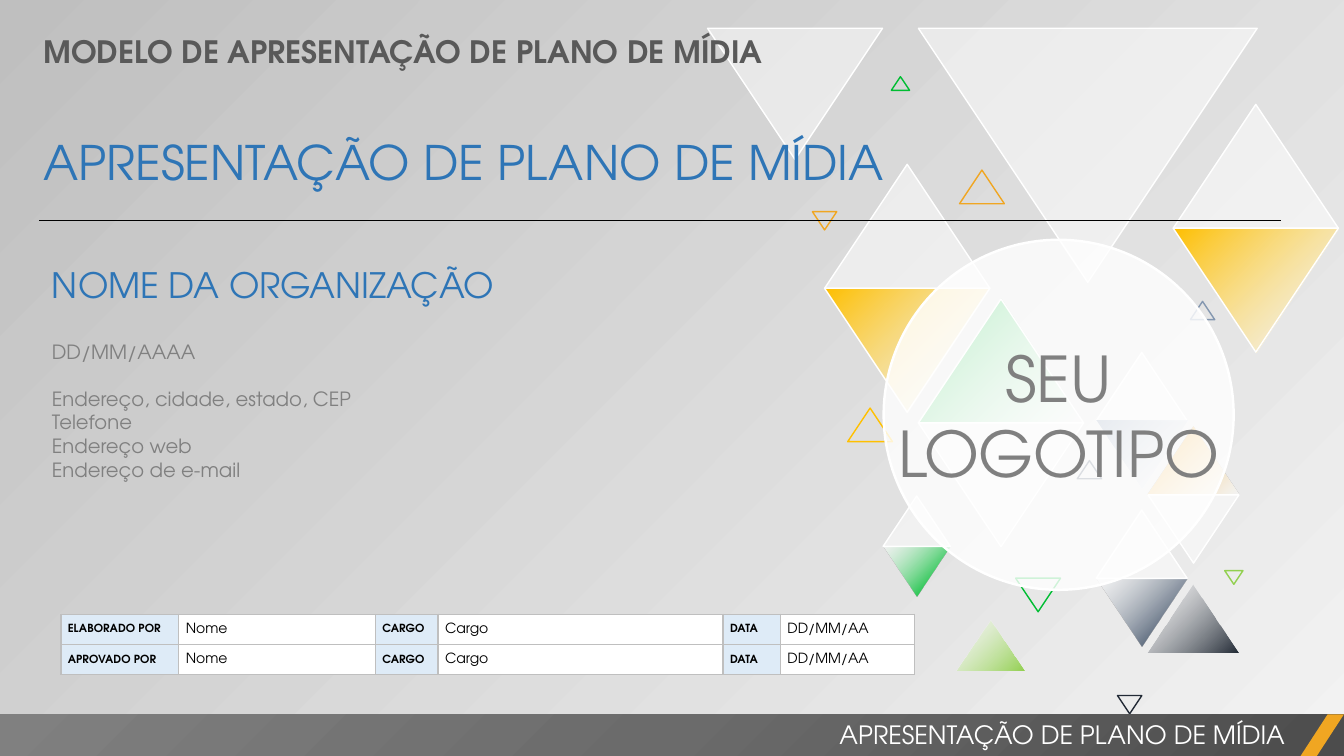
"""Build the cover slide of a media plan presentation."""
import pptx
import pptx.dml.color
import pptx.enum.shapes
import pptx.enum.text
import pptx.oxml
import pptx.oxml.ns
import pptx.util

Pt = pptx.util.Pt
RGB = pptx.dml.color.RGBColor.from_string
qn = pptx.oxml.ns.qn
KIND = pptx.enum.shapes.MSO_SHAPE
ALIGN = pptx.enum.text.PP_ALIGN
MIDDLE = pptx.enum.text.MSO_ANCHOR.MIDDLE
FONT = "TeX Gyre Adventor"
HUES = {
    "white": "FFFFFF", "black": "000000", "pale": "F2F2F2", "silver": "BFBFBF",
    "gold": "FFC000", "green": "00BD32", "lime": "92D050", "orange": "F0A622",
    "night": "222A35", "slate": "44546A", "steel": "8497B0", "blue": "2E75B6",
    "ice": "DEEBF7", "gray": "808080", "dark": "595959",
    "coal": "4C4C4C", "ash": "6B6B6B",
}


def paint(fill, node, stops, way='<a:lin ang="13500000" scaled="0"/>'):
    """Fill with (place, hue, opacity) stops; a single stop is a solid fill."""
    marks = [(at, f'<a:srgbClr val="{HUES[hue]}"><a:alpha val="{seen * 1000}"/></a:srgbClr>')
             for at, hue, seen in stops]
    if len(marks) == 1:
        fill.solid()
        tag, body = "solidFill", marks[0][1]
    else:
        fill.gradient()
        list_ = "".join(f'<a:gs pos="{at * 1000}">{hue}</a:gs>' for at, hue in marks)
        tag, body = "gradFill", f"<a:gsLst>{list_}</a:gsLst>{way}"
    turn = ' rotWithShape="1"' if tag == "gradFill" else ""
    old = node.find(".//" + qn("a:" + tag))
    new = pptx.oxml.parse_xml(
        f'<a:{tag} {pptx.oxml.ns.nsdecls("a")}{turn}>{body}</a:{tag}>')
    old.getparent().replace(old, new)


def write(frame, rows, **look):
    """Write (text, size, hue, space before) rows; look sets paragraph values."""
    for i, (text, size, hue, gap) in enumerate(rows):
        para = frame.paragraphs[0] if i == 0 else frame.add_paragraph()
        for key, val in {"space_before": Pt(gap), **look}.items():
            setattr(para, key, val)
        run = para.add_run()
        run.text = text
        for key, val in {"name": FONT, "size": Pt(size), "bold": False}.items():
            setattr(run.font, key, val)
        run.font.color.rgb = RGB(HUES[hue])


deck = pptx.Presentation()
deck.slide_width, deck.slide_height = Pt(960), Pt(540)
slide = deck.slides.add_slide(deck.slide_layouts[6])
shapes = slide.shapes
paint(slide.background.fill, slide._element, [(0, "pale", 40), (100, "silver", 100)])

glass = [(0, "white", 50)]
fade = {hue: [(0, hue, 100), (100, "white", 50)]
        for hue in ("gold", "night", "steel", "lime")}
glow = {hue: [(0, "white", 50), (82, hue, 100)]
        for hue in ("green", "slate", "orange")}
UP, DOWN = 0, 180
tiles = [
    (589, 117.4, 118, UP, glass, "white"),
    (589, 205.9, 118, DOWN, fade["gold"], "white"),
    (656, 213.6, 118, UP, glow["green"], "white"),
    (656, 302, 118, DOWN, glass, "white"),
    (656, 20.2, 242, DOWN, glass, "white"),
    (819.5, 417.6, 65, UP, fade["night"], None),
    (783, 413.3, 65, DOWN, glow["slate"], None),
    (783, 364.4, 65, UP, glass, "white"),
    (783, 251.8, 65, UP, glass, "white"),
    (783, 300.5, 65, DOWN, fade["steel"], None),
    (820, 304.7, 65, UP, glow["orange"], None),
    (820, 353.5, 65, DOWN, glass, "white"),
    (683.5, 443, 48, UP, fade["lime"], None),
    (630.8, 390.3, 48, DOWN, glow["green"], None),
    (630.8, 354.3, 48, UP, glass, "white"),
    (838, 74.6, 118, UP, glass, "white"),
    (838, 163, 118, DOWN, fade["gold"], "white"),
    (725.5, 413, 32, DOWN, None, "green"),
    (605.5, 291.5, 32, UP, None, "gold"),
    (769.5, 329, 17.4, UP, None, "slate"),
    (798.2, 496.8, 17.4, DOWN, None, "night"),
    (580.3, 151.2, 17.4, DOWN, None, "orange"),
    (850.3, 215.3, 17.4, UP, None, "steel"),
    (636.7, 54.8, 13, UP, None, "green"),
    (874.8, 407.6, 13, DOWN, None, "lime"),
    (685.4, 121.5, 32, UP, None, "orange"),
    (505.4, 20.2, 125, DOWN, glass, "white"),
]
for x, y, wide, turn, stops, edge in tiles:
    tile = shapes.add_shape(KIND.ISOSCELES_TRIANGLE, Pt(x), Pt(y), Pt(wide), Pt(wide * 0.75))
    tile.shadow.inherit = False
    tile.rotation = turn
    if stops:
        paint(tile.fill, tile._element, stops)
    else:
        tile.fill.background()
    if edge:
        tile.line.color.rgb = RGB(HUES[edge])
        tile.line.width = Pt(1)
    else:
        tile.line.fill.background()

bar = shapes.add_shape(KIND.RECTANGLE, 0, Pt(510.2), Pt(960), Pt(29.8))
paint(bar.fill, bar._element, [(0, "coal", 100), (50, "ash", 100), (100, "gray", 100)],
      '<a:path path="circle"><a:fillToRect l="100000" t="100000"/></a:path>')
slant = shapes.add_shape(KIND.PARALLELOGRAM, Pt(929), Pt(510.2), Pt(31), Pt(29.8))
slant.adjustments[0] = 0.65
paint(slant.fill, slant._element, [(0, "orange", 100)])
for part in (bar, slant):
    part.shadow.inherit = False
    part.line.fill.background()

title = "APRESENTAÇÃO DE PLANO DE MÍDIA"
notes = [
    (24, 20, 652, 34, ALIGN.LEFT, [("MODELO DE " + title, 22, "dark", 0)]),
    (378, 510, 547, 29, ALIGN.RIGHT, [(title, 18, "white", 0)]),
    (24, 91.4, 904, 50, ALIGN.LEFT, [(title, 34, "blue", 0)]),
    (30, 185, 654, 163, ALIGN.LEFT, [
        ("NOME DA ORGANIZAÇÃO", 25, "blue", 0),
        ("DD/MM/AAAA", 14, "gray", 24),
        ("Endereço, cidade, estado, CEP", 14, "gray", 17),
        ("Telefone", 14, "gray", 0),
        ("Endereço web", 14, "gray", 0),
        ("Endereço de e-mail", 14, "gray", 0)]),
]
for x, y, wide, high, side, rows in notes:
    box = shapes.add_textbox(Pt(x), Pt(y), Pt(wide), Pt(high))
    box.text_frame.word_wrap = True
    write(box.text_frame, rows, alignment=side)
    if rows[0][2] == "dark":
        box.text_frame.paragraphs[0].runs[0].font.bold = True

rule = shapes.add_connector(pptx.enum.shapes.MSO_CONNECTOR.STRAIGHT,
                            Pt(28), Pt(157.2), Pt(915), Pt(157.2))
rule.line.color.rgb = RGB(HUES["black"])
rule.line.width = Pt(0.5)
rule._element.spPr.append(pptx.oxml.parse_xml(f'<a:effectLst {pptx.oxml.ns.nsdecls("a")}/>'))

logo = shapes.add_shape(KIND.OVAL, Pt(631.2), Pt(171.3), Pt(250), Pt(250))
logo.shadow.inherit = False
paint(logo.fill, logo._element, [(0, "white", 81)])
logo.line.color.rgb = RGB(HUES["white"])
logo.line.width = Pt(1.75)
inset = {"margin_left": 0, "margin_right": 0, "margin_top": 0, "margin_bottom": 0}
for key, val in {**inset, "word_wrap": False, "vertical_anchor": MIDDLE}.items():
    setattr(logo.text_frame, key, val)
write(logo.text_frame, [("SEU", 45, "gray", 0), ("LOGOTIPO", 45, "gray", 0)],
      alignment=ALIGN.CENTER)

wides = [84.2, 140.4, 44.8, 203.6, 41, 96]
grid = shapes.add_table(2, 6, Pt(43.5), Pt(438.8), Pt(sum(wides)), Pt(43)).table
grid.first_row = grid.horz_banding = False
for col, wide in zip(grid.columns, wides):
    col.width = Pt(wide)
for r, label in enumerate(["ELABORADO POR", "APROVADO POR"]):
    grid.rows[r].height = Pt(21.5)
    texts = [label, "Nome", "CARGO", "Cargo", "DATA", "DD/MM/AA"]
    for c, text in enumerate(texts):
        head = c % 2 == 0
        cell = grid.cell(r, c)
        for key, val in {**inset, "margin_left": Pt(5), "margin_right": Pt(5),
                         "vertical_anchor": MIDDLE}.items():
            setattr(cell, key, val)
        write(cell.text_frame, [(text, 8 if head else 10, "black", 0)], line_spacing=1.07)
        cell.text_frame.paragraphs[0].runs[0].font.bold = head
        for side in "LRTB":
            cell._tc.tcPr.append(pptx.oxml.parse_xml(
                f'<a:ln{side} {pptx.oxml.ns.nsdecls("a")} w="12700"><a:solidFill>'
                f'<a:srgbClr val="{HUES["silver"]}"/></a:solidFill></a:ln{side}>'))
        cell.fill.solid()
        cell.fill.fore_color.rgb = RGB(HUES["ice" if head else "white"])

deck.save("out.pptx")
